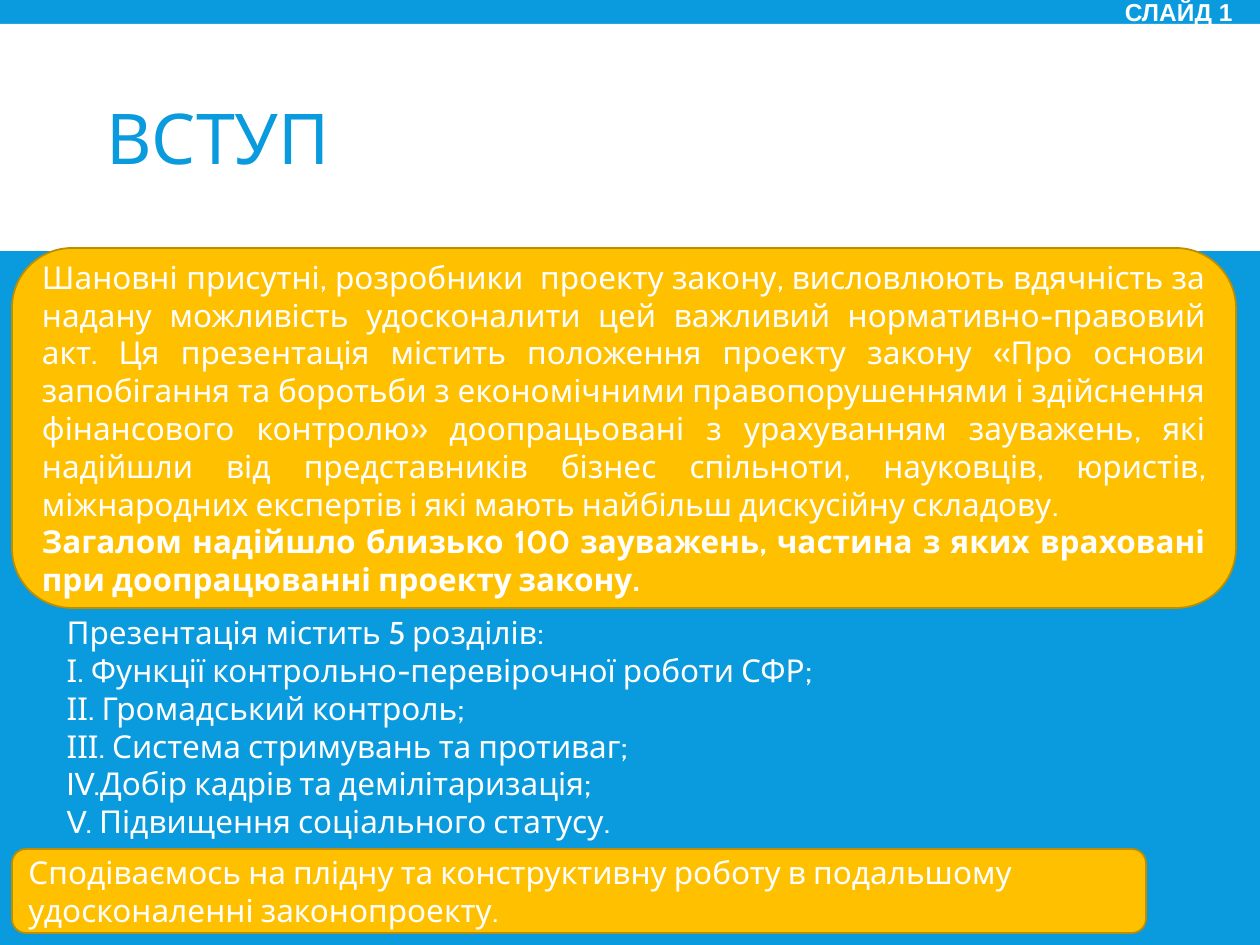
"""Builds the introduction slide of a bill presentation."""
import pptx
import pptx.dml.color
import pptx.enum.shapes
import pptx.enum.text
import pptx.oxml.ns
import pptx.util

INTRO = [
    ("Шановні присутні, розробники  проекту закону, висловлюють вдячність за надану "
     "можливість удосконалити цей важливий нормативно-правовий акт. Ця презентація "
     "містить положення проекту закону «Про основи запобігання та боротьби з "
     "економічними правопорушеннями і здійснення фінансового контролю» доопрацьовані "
     "з урахуванням зауважень, які надійшли від представників бізнес спільноти, "
     "науковців, юристів, міжнародних експертів і які мають найбільш дискусійну "
     "складову.", False),
    ("Загалом надійшло близько 100 зауважень, частина з яких враховані при "
     "доопрацюванні проекту закону.", True),
]
SECTIONS = [(line, False) for line in (
    "Презентація містить 5 розділів:",
    "І. Функції контрольно-перевірочної роботи СФР;",
    "ІІ. Громадський контроль;",
    "ІІІ. Система стримувань та противаг;",
    "IV.Добір кадрів та демілітаризація;",
    "V. Підвищення соціального статусу.",
)]
CLOSING = [("Сподіваємось на плідну та конструктивну роботу в подальшому "
            "удосконаленні законопроекту.", False)]
TITLE = [("ВСТУП", False)]
SLIDE_LABEL = [("СЛАЙД 1", True)]

COLORS = {"blue": "099BDD", "white": "FFFFFF", "amber": "FFC000", "edge": "BD8E00"}
BOXES = {
    "band": (0, 24, 1260, 227),
    "title": (94, 39, 1071, 208),
    "intro": (12, 248, 1224, 360),
    "sections": (54, 607, 824, 242),
    "closing": (12, 849, 1134, 84),
    "label": (1046, -19, 199, 66),
}
EMU_PER_PX = 914400 / 126
ALIGN = pptx.enum.text.PP_ALIGN
ANCHOR = pptx.enum.text.MSO_ANCHOR
SHAPE = pptx.enum.shapes.MSO_SHAPE


def px(length):
    return pptx.util.Emu(round(length * EMU_PER_PX))


def box(name):
    return [px(length) for length in BOXES[name]]


def rgb(name):
    return pptx.dml.color.RGBColor.from_string(COLORS[name])


def place(placeholder, name):
    placeholder.left, placeholder.top, placeholder.width, placeholder.height = box(name)
    return placeholder


def write(holder, paragraphs, size=18, font="Cabin", color="white",
          align=ALIGN.LEFT, anchor=ANCHOR.MIDDLE, spacing=1.0):
    frame = holder.text_frame
    frame.word_wrap = True
    frame.auto_size = pptx.enum.text.MSO_AUTO_SIZE.NONE
    frame.vertical_anchor = anchor
    for index, (text, bold) in enumerate(paragraphs):
        paragraph = frame.add_paragraph() if index else frame.paragraphs[0]
        paragraph.alignment = align
        paragraph.line_spacing = spacing
        paragraph.space_before = pptx.util.Pt(0)
        run = paragraph.add_run()
        run.text = text
        run.font.size = pptx.util.Pt(size)
        run.font.name = font
        run.font.bold = bold
        run.font.color.rgb = rgb(color)


def add_panel(slide, name, preset, fill, edge=None):
    panel = slide.shapes.add_shape(preset, *box(name))
    panel.shadow.inherit = False
    panel.fill.solid()
    panel.fill.fore_color.rgb = rgb(fill)
    if edge:
        panel.line.color.rgb = rgb(edge)
        panel.line.width = pptx.util.Pt(1)
    else:
        panel.line.fill.background()
    return panel


def remove_bullets(holder):
    for paragraph in holder.text_frame.paragraphs:
        properties = paragraph._p.get_or_add_pPr()
        properties.set("marL", "0")
        properties.set("indent", "0")
        properties.append(pptx.oxml.parse_xml(
            "<a:buNone %s/>" % pptx.oxml.ns.nsdecls("a")))


def main():
    deck = pptx.Presentation()
    deck.slide_width, deck.slide_height = px(1260), px(945)
    slide = deck.slides.add_slide(deck.slide_layouts[1])
    slide.background.fill.solid()
    slide.background.fill.fore_color.rgb = rgb("blue")

    band = add_panel(slide, "band", SHAPE.RECTANGLE, "white")
    slide.shapes._spTree.insert(2, band._element)

    title = place(slide.shapes.title, "title")
    write(title, TITLE, size=40, color="blue", spacing=0.85)

    intro = add_panel(slide, "intro", SHAPE.FLOWCHART_ALTERNATE_PROCESS, "amber", "edge")
    write(intro, INTRO, align=ALIGN.JUSTIFY)

    sections = place(slide.placeholders[1], "sections")
    write(sections, SECTIONS, anchor=ANCHOR.TOP)
    remove_bullets(sections)

    closing = add_panel(slide, "closing", SHAPE.FLOWCHART_ALTERNATE_PROCESS, "amber", "edge")
    write(closing, CLOSING)

    label = slide.shapes.add_textbox(*box("label"))
    write(label, SLIDE_LABEL, size=14, font="Arial", align=ALIGN.RIGHT, spacing=0.85)

    deck.save("out.pptx")


if __name__ == "__main__":
    main()
